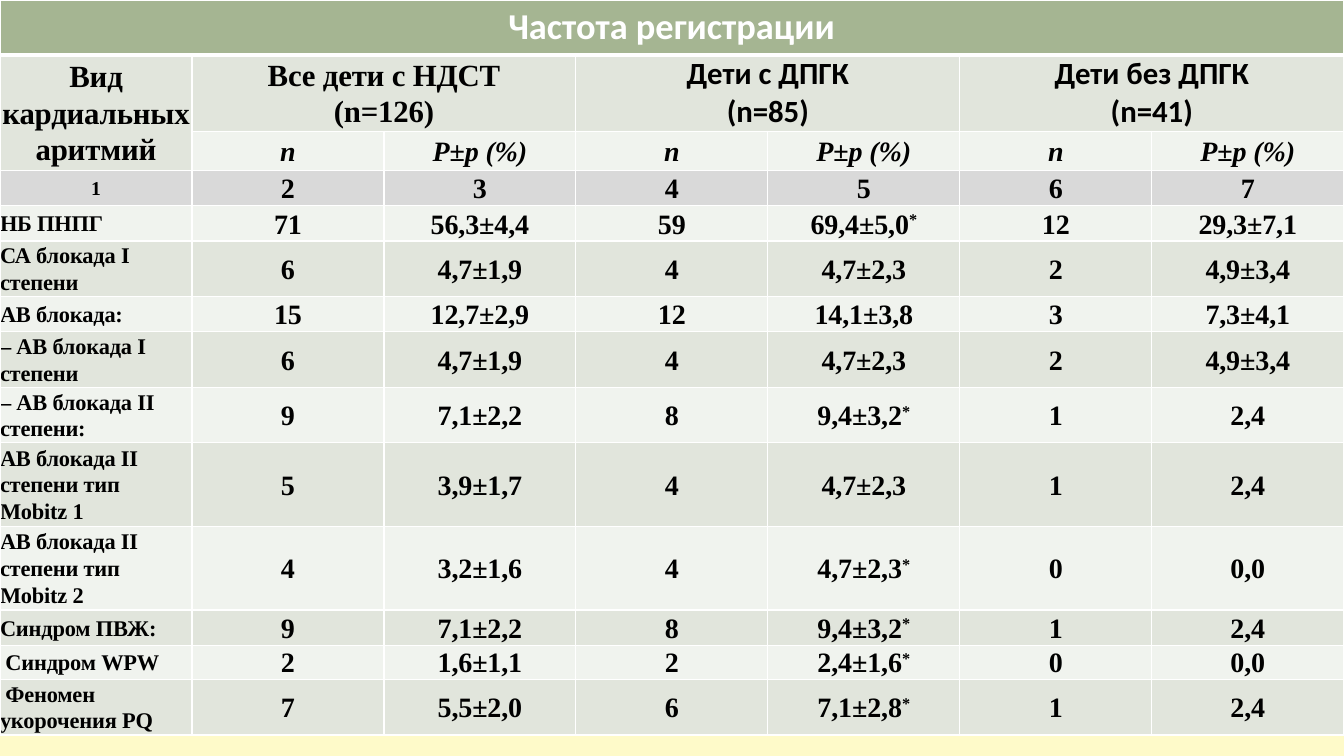
from lxml import etree
from pptx import Presentation
from pptx.dml.color import RGBColor
from pptx.enum.text import MSO_ANCHOR, PP_ALIGN
from pptx.oxml.ns import qn
from pptx.util import Inches, Pt

LEFT, CENTER = PP_ALIGN.LEFT, PP_ALIGN.CENTER
TOP, MIDDLE = MSO_ANCHOR.TOP, MSO_ANCHOR.MIDDLE
SERIF, SANS = "Times New Roman", "Calibri"
COLORS = {
    "background": "FEFAC9",
    "title": "A5B592",
    "odd": "E1E5DC",
    "even": "F0F3EE",
    "numbers": "D9D9D9",
    "white": "FFFFFF",
    "black": "000000",
}
SLIDE_WIDTH, SLIDE_HEIGHT = 13.33, 7.5
ROW_HEIGHTS = [0.53, 0.76, 0.39, 0.35, 0.35, 0.55, 0.35,
               0.55, 0.55, 0.83, 0.83, 0.35, 0.34, 0.55]
COLUMN_COUNT = 7
TITLE_ROW, GROUP_ROW, MEASURE_ROW, NUMBER_ROW, FIRST_DATA_ROW = range(5)

TITLE = "Частота регистрации"
ROW_HEADING = "Вид кардиальных аритмий"
GROUPS = [
    ("Все дети с НДСТ\n(n=126)", SERIF),
    ("Дети с ДПГК\n(n=85)", SANS),
    ("Дети без ДПГК\n(n=41)", SANS),
]
MEASURES = ["n", "P±р (%)"]
ARRHYTHMIAS = [
    ("НБ ПНПГ", "71", "56,3±4,4", "59", "69,4±5,0*", "12", "29,3±7,1"),
    ("СА блокада I степени", "6", "4,7±1,9", "4", "4,7±2,3", "2", "4,9±3,4"),
    ("АВ блокада:", "15", "12,7±2,9", "12", "14,1±3,8", "3", "7,3±4,1"),
    ("– АВ блокада I степени", "6", "4,7±1,9", "4", "4,7±2,3", "2", "4,9±3,4"),
    ("– АВ блокада II степени:", "9", "7,1±2,2", "8", "9,4±3,2*", "1", "2,4"),
    ("АВ блокада II степени тип Mobitz 1",
     "5", "3,9±1,7", "4", "4,7±2,3", "1", "2,4"),
    ("АВ блокада II степени тип Mobitz 2",
     "4", "3,2±1,6", "4", "4,7±2,3*", "0", "0,0"),
    ("Синдром ПВЖ:", "9", "7,1±2,2", "8", "9,4±3,2*", "1", "2,4"),
    (" Синдром WPW", "2", "1,6±1,1", "2", "2,4±1,6*", "0", "0,0"),
    (" Феномен укорочения PQ", "7", "5,5±2,0", "6", "7,1±2,8*", "1", "2,4"),
]


def color(name):
    return RGBColor.from_string(COLORS[name])


def write(cell, text, size=20, font=SERIF, ink="black", italic=False,
          align=CENTER, anchor=MIDDLE, margin=0):
    """Fill a cell with bold text; a closing asterisk becomes a superscript."""
    cell.vertical_anchor = anchor
    if margin is not None:
        cell.margin_left = cell.margin_right = Inches(margin)
        cell.margin_top = cell.margin_bottom = Inches(margin)
    frame = cell.text_frame
    for index, line in enumerate(text.split("\n")):
        paragraph = frame.add_paragraph() if index else frame.paragraphs[0]
        paragraph.alignment = align
        if font == SERIF:
            paragraph.line_spacing = 1.07
        body, star, _ = line.partition("*")
        for part in filter(None, (body, star)):
            run = paragraph.add_run()
            run.text = part
            run.font.size = Pt(size)
            run.font.name = font
            run.font.bold = True
            run.font.italic = italic
            run.font.color.rgb = color(ink)
            properties = run.font._element
            if font == SERIF:
                properties.set("spc", "-10")
            if part == "*":
                properties.set("baseline", "30000")


def set_borders(cell, bottom=1, top=1):
    """Draw white borders, with widths in points."""
    properties = cell._tc.get_or_add_tcPr()
    widths = {"a:lnL": 1, "a:lnR": 1, "a:lnT": top, "a:lnB": bottom}
    for index, (tag, width) in enumerate(widths.items()):
        line = etree.Element(qn(tag), w=str(Pt(width)))
        fill = etree.SubElement(line, qn("a:solidFill"))
        etree.SubElement(fill, qn("a:srgbClr"), val=COLORS["white"])
        properties.insert(index, line)


def row_fill(row):
    special = {TITLE_ROW: "title", NUMBER_ROW: "numbers"}
    return special.get(row, "odd" if row % 2 else "even")


def style_grid(table):
    for row in range(len(ROW_HEIGHTS)):
        for column in range(COLUMN_COUNT):
            cell = table.cell(row, column)
            cell.fill.solid()
            cell.fill.fore_color.rgb = color(row_fill(row))
            set_borders(cell, bottom=3 if row == TITLE_ROW else 1,
                        top=3 if row == GROUP_ROW else 1)


def fill_header(table):
    title = table.cell(TITLE_ROW, 0)
    title.merge(table.cell(TITLE_ROW, COLUMN_COUNT - 1))
    write(title, TITLE, size=26, font=SANS, ink="white", anchor=TOP, margin=None)

    heading = table.cell(GROUP_ROW, 0)
    heading.merge(table.cell(MEASURE_ROW, 0))
    write(heading, ROW_HEADING, size=22)

    for index, (group, font) in enumerate(GROUPS):
        first = 1 + index * len(MEASURES)
        cell = table.cell(GROUP_ROW, first)
        cell.merge(table.cell(GROUP_ROW, first + len(MEASURES) - 1))
        write(cell, group, size=22, font=font)
        for offset, measure in enumerate(MEASURES):
            write(table.cell(MEASURE_ROW, first + offset), measure, italic=True)

    for column in range(COLUMN_COUNT):
        write(table.cell(NUMBER_ROW, column), str(column + 1),
              size=20 if column else 14)


def fill_data(table):
    for row, (name, *values) in enumerate(ARRHYTHMIAS, FIRST_DATA_ROW):
        write(table.cell(row, 0), name, size=16, align=LEFT)
        for column, value in enumerate(values, 1):
            write(table.cell(row, column), value)


def add_frequency_table(slide, left, top, width):
    shape = slide.shapes.add_table(
        len(ROW_HEIGHTS), COLUMN_COUNT, Inches(left), Inches(top),
        Inches(width), Inches(sum(ROW_HEIGHTS)))
    table = shape.table
    for column in table.columns:
        column.width = Inches(width / COLUMN_COUNT)
    for row, height in zip(table.rows, ROW_HEIGHTS):
        row.height = Inches(height)
    style_grid(table)
    fill_header(table)
    fill_data(table)


def main():
    presentation = Presentation()
    presentation.slide_width = Inches(SLIDE_WIDTH)
    presentation.slide_height = Inches(SLIDE_HEIGHT)
    slide = presentation.slides.add_slide(presentation.slide_layouts[6])
    slide.background.fill.solid()
    slide.background.fill.fore_color.rgb = color("background")
    add_frequency_table(slide, 0, 0, SLIDE_WIDTH)
    presentation.save("out.pptx")


if __name__ == "__main__":
    main()
